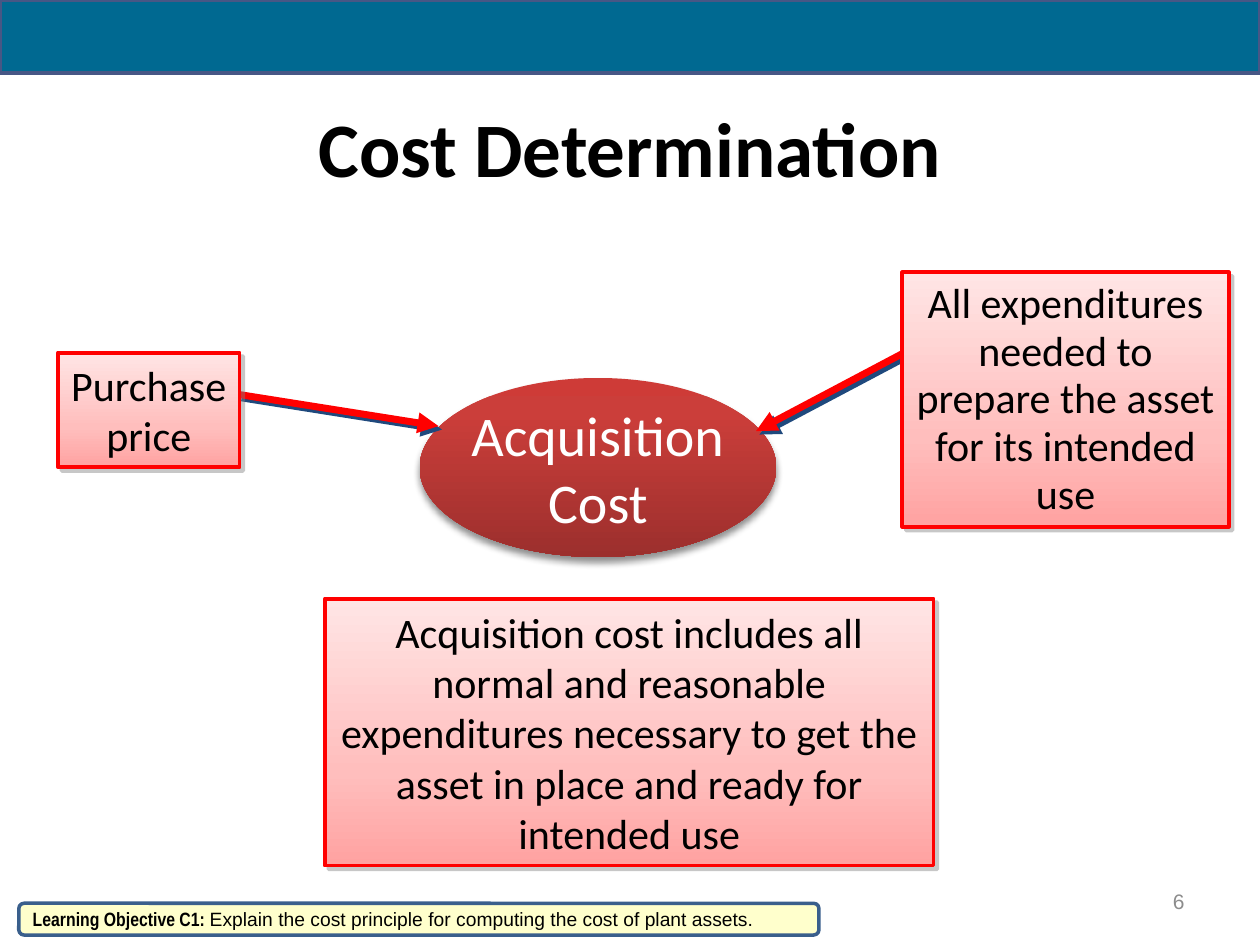
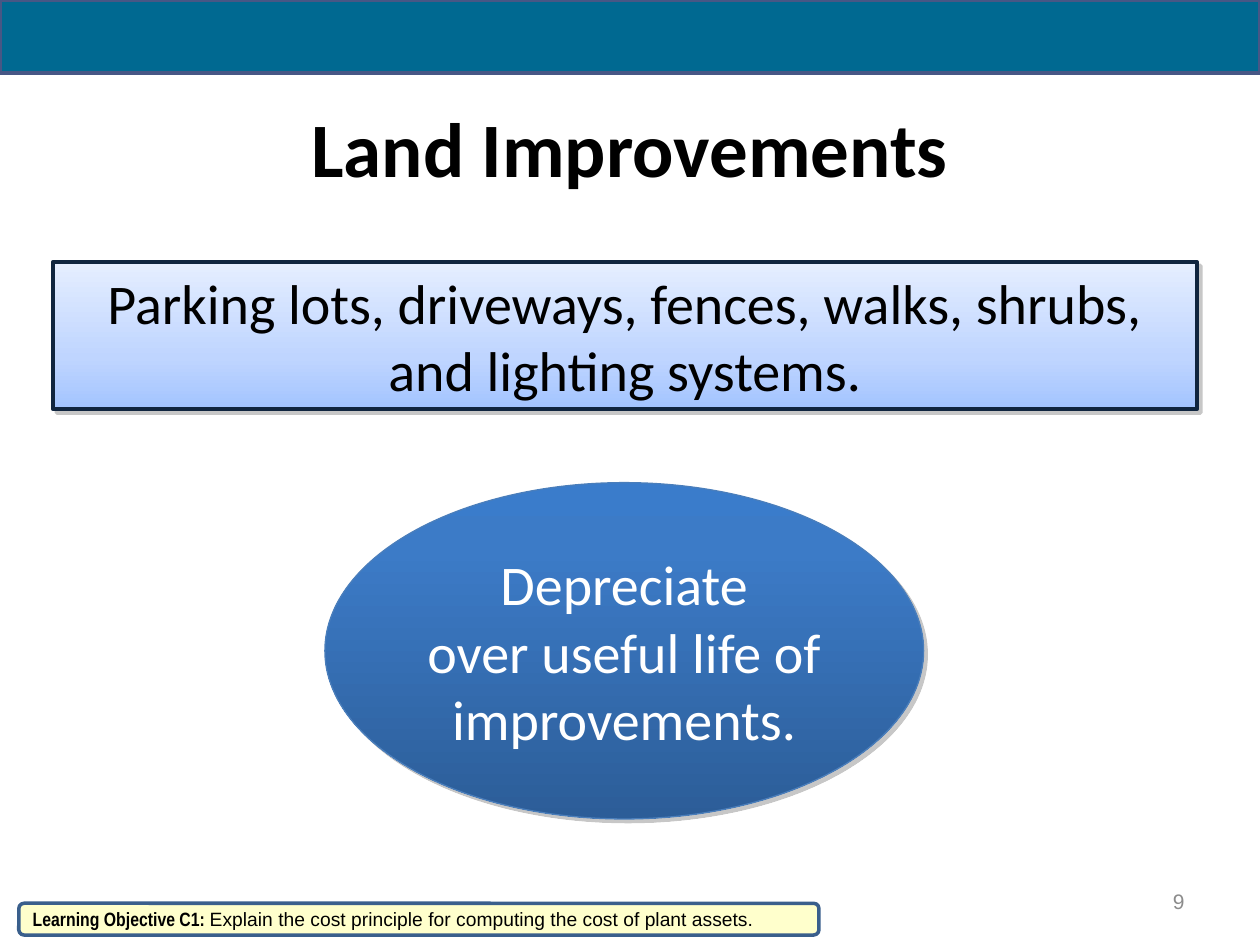
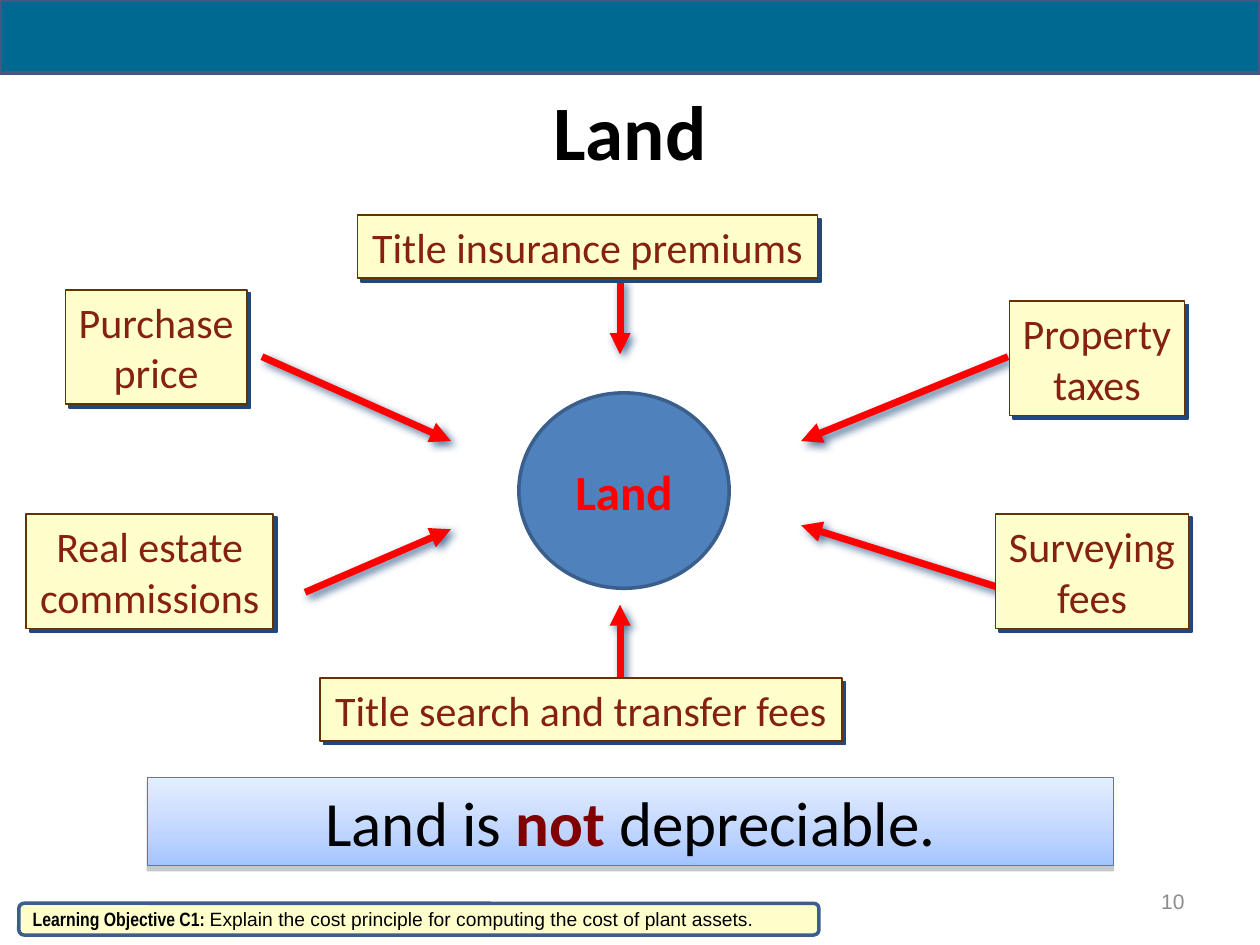
from dataclasses import dataclass, replace

from lxml.etree import SubElement
from pptx import Presentation
from pptx.dml.color import RGBColor
from pptx.enum.shapes import MSO_CONNECTOR, MSO_SHAPE
from pptx.enum.text import MSO_ANCHOR, PP_ALIGN
from pptx.oxml.ns import qn
from pptx.util import Cm, Pt


@dataclass(frozen=True)
class Shadow:
    color: str
    alpha: int
    blur: float
    distance: float
    angle: int = 45


@dataclass(frozen=True)
class Look:
    """Fill is one colour, or (position, colour) stops running downwards."""
    fill: object
    line: str = None
    width: float = 0
    shadow: Shadow = None
    ink: str = "000000"
    size: int = 24
    bold: bool = False
    wrap: bool = True


@dataclass(frozen=True)
class Theme:
    font: str = "Calibri"
    small_font: str = "Arial"
    narrow_font: str = "Arial Narrow"
    black: str = "000000"
    red: str = "FF0000"
    maroon: str = "800000"
    gray: str = "8C8C8C"
    title_size: int = 44
    number_size: int = 12
    arrow_width: float = 4
    soft: Shadow = Shadow("808080", 43, 0, 3)
    hard: Shadow = Shadow("1F497D", 100, 0, 2.8)
    blurred: Shadow = Shadow("1F497D", 75, 5, 3)


THEME = Theme()
BAND = Look("006991", "475785", 2.25)
OBJECTIVE = Look("FFFFCC", "3A5F8C", 2, size=11)
PINK = Look(((0, "FFE5E5"), (65, "FFBEBD"), (100, "FFA2A1")),
            THEME.red, 2.25, THEME.soft)
PALE_BLUE = Look(((0, "E5EEFF"), (65, "BFD5FF"), (100, "A3C4FF")),
                 "10253F", 2.25, THEME.soft, size=32)
STATEMENT = replace(PALE_BLUE, line="4A7EBB", width=0.75, size=36,
                    shadow=replace(THEME.soft, angle=90))
RED_OVAL = Look(((0, "CE3B37"), (20, "CB3E3A"), (100, "9C2F2D")),
                shadow=Shadow("000000", 43, 4, 3, 90),
                ink="FFFFFF", size=32, wrap=False)
BLUE_OVAL = Look(((0, "3A7CCB"), (20, "3C7BC7"), (100, "2C5D98")),
                 "4A7EBB", 0.75, THEME.soft, "FFFFFF", 32)
LAND_OVAL = Look("4F81BD", "3A5F8C", 2, ink=THEME.red, size=28, bold=True)
CREAM = Look("FFFFCC", "663300", 1, THEME.hard, "862110", wrap=False)


@dataclass(frozen=True)
class Box:
    """A region in centimetres."""
    left: float
    top: float
    width: float
    height: float

    def point(self, x, y):
        return Cm(self.left + x), Cm(self.top + y)

    def area(self, x, y, width, height):
        return *self.point(x, y), Cm(width), Cm(height)


PAGE = Box(0, 0, 25.4, 19.05)
BODY = Box(0, 4, 25.4, 14)
TITLE = Box(1.27, 1.47, 22.86, 2.97)
HIGH_TITLE = Box(1.27, 1.27, 22.86, 2.67)


def add_span(para, text, color, size, bold=False, font=THEME.font):
    """Add a run for each line of the text, with line breaks between them."""
    for index, line in enumerate(text.split("\n")):
        if index:
            para.add_line_break()
        span = para.add_run()
        span.text = line
        span.font.name = font
        span.font.size = Pt(size)
        span.font.bold = bold
        span.font.color.rgb = RGBColor.from_string(color)


def add_shadow(shape, shadow):
    properties = shape._element.spPr
    effects = properties.find(qn("a:effectLst"))
    if effects is None:
        effects = SubElement(properties, qn("a:effectLst"))
    outer = SubElement(effects, qn("a:outerShdw"), blurRad=str(Pt(shadow.blur)),
                       dist=str(Pt(shadow.distance)),
                       dir=str(shadow.angle * 60000), algn="ctr", rotWithShape="0")
    color = SubElement(outer, qn("a:srgbClr"), val=shadow.color)
    SubElement(color, qn("a:alpha"), val=str(shadow.alpha * 1000))


def fill_shape(shape, fill):
    if isinstance(fill, str):
        shape.fill.solid()
        shape.fill.fore_color.rgb = RGBColor.from_string(fill)
        return
    shape.fill.gradient()
    shape.fill.gradient_angle = 270
    stops = shape._element.spPr.find(qn("a:gradFill")).find(qn("a:gsLst"))
    for stop in list(stops):
        stops.remove(stop)
    for position, color in fill:
        stop = SubElement(stops, qn("a:gs"), pos=str(position * 1000))
        SubElement(stop, qn("a:srgbClr"), val=color)


def add_block(page, area, look, *paragraphs, kind=MSO_SHAPE.RECTANGLE):
    """Add a shape whose text is centred, and return it."""
    shape = page.shapes.add_shape(kind, *area)
    shape.shadow.inherit = False
    fill_shape(shape, look.fill)
    if look.line:
        shape.line.color.rgb = RGBColor.from_string(look.line)
        shape.line.width = Pt(look.width)
    else:
        shape.line.fill.background()
    if look.shadow:
        add_shadow(shape, look.shadow)
    frame = shape.text_frame
    frame.word_wrap = look.wrap
    frame.vertical_anchor = MSO_ANCHOR.MIDDLE
    for index, text in enumerate(paragraphs):
        para = frame.add_paragraph() if index else frame.paragraphs[0]
        para.alignment = PP_ALIGN.CENTER
        add_span(para, text, look.ink, look.size, look.bold)
    return shape


def add_arrow(page, start, end, shadow):
    arrow = page.shapes.add_connector(MSO_CONNECTOR.STRAIGHT, *start, *end)
    arrow.line.color.rgb = RGBColor.from_string(THEME.red)
    arrow.line.width = Pt(THEME.arrow_width)
    SubElement(arrow._element.spPr.find(qn("a:ln")), qn("a:tailEnd"), type="triangle")
    add_shadow(arrow, shadow)


def add_title(page, box, text):
    title = page.shapes.title
    title.left, title.top, title.width, title.height = box.area(
        0, 0, box.width, box.height)
    frame = title.text_frame
    frame.vertical_anchor = MSO_ANCHOR.MIDDLE
    para = frame.paragraphs[0]
    para.alignment = PP_ALIGN.CENTER
    add_span(para, text, THEME.black, THEME.title_size, True)


def add_surround(page, box, number):
    """Add the top band, the page number and the learning objective."""
    add_block(page, box.area(0, 0, box.width, 1.47), BAND)

    label = page.shapes.add_textbox(*box.area(18.21, 17.65, 5.92, 1.02))
    label.text_frame.word_wrap = True
    label.text_frame.vertical_anchor = MSO_ANCHOR.MIDDLE
    para = label.text_frame.paragraphs[0]
    para.alignment = PP_ALIGN.RIGHT
    add_span(para, str(number), THEME.gray, THEME.number_size, font=THEME.small_font)

    objective = add_block(page, box.area(0.38, 18.21, 16.13, 0.64), OBJECTIVE,
                          kind=MSO_SHAPE.ROUNDED_RECTANGLE)
    para = objective.text_frame.paragraphs[0]
    para.alignment = PP_ALIGN.LEFT
    add_span(para, "Learning Objective C1: ", OBJECTIVE.ink, OBJECTIVE.size,
             True, THEME.narrow_font)
    add_span(para, "Explain the cost principle for computing the cost of plant assets.",
             OBJECTIVE.ink, OBJECTIVE.size, font=THEME.small_font)


def draw_cost(page, box):
    add_block(page, box.area(8.46, 3.62, 7.19, 3.61), RED_OVAL,
              "Acquisition\nCost", kind=MSO_SHAPE.OVAL)
    add_block(page, box.area(6.55, 8.07, 12.27, 5.38), PINK,
              "Acquisition cost includes all normal and reasonable expenditures "
              "necessary to get the asset in place and ready for intended use")
    add_arrow(page, box.point(18.85, 2.78), box.point(15.24, 4.69), THEME.hard)
    expenditures = add_block(
        page, box.area(18.19, 1.49, 6.58, 5.13), PINK,
        "All expenditures needed to prepare the asset for its intended use")
    expenditures.text_frame.paragraphs[0].line_spacing = 0.95
    add_arrow(page, box.point(4.8, 3.95), box.point(8.84, 4.59), THEME.hard)
    add_block(page, box.area(1.17, 3.11, 3.66, 2.31), replace(PINK, wrap=False),
              "Purchase\nprice")


def draw_improvements(page, box):
    add_block(page, box.area(1.07, 1.28, 23.06, 2.97), PALE_BLUE,
              "Parking lots, driveways, fences, walks, shrubs, and lighting systems.")
    add_block(page, box.area(6.55, 5.73, 12.07, 6.78), BLUE_OVAL,
              "Depreciate\nover useful life of improvements.", kind=MSO_SHAPE.OVAL)


def draw_land(page, box):
    statement = add_block(page, box.area(2.97, 11.67, 19.48, 1.78), STATEMENT)
    para = statement.text_frame.paragraphs[0]
    para.alignment = PP_ALIGN.CENTER
    add_span(para, "Land is ", STATEMENT.ink, STATEMENT.size)
    add_span(para, "not", THEME.maroon, STATEMENT.size, True)
    add_span(para, " depreciable.", STATEMENT.ink, STATEMENT.size)

    arrows = [
        ((12.5, 1.64), (12.5, 3.14)),
        ((12.5, 10.1), (12.5, 8.19)),
        ((6.15, 7.94), (9.09, 6.67)),
        ((20.32, 3.19), (16.15, 4.89)),
        ((5.28, 3.19), (9.09, 4.89)),
        ((20.19, 7.86), (16.15, 6.59)),
    ]
    for start, end in arrows:
        add_arrow(page, box.point(*start), box.point(*end), THEME.blurred)

    one_line, two_lines = 1.27, 2.31
    costs = [
        (1.32, 1.84, 3.66, two_lines, ["Purchase\nprice"]),
        (0.53, 6.36, 4.98, two_lines, ["Real estate", "commissions"]),
        (7.21, 0.34, 9.27, one_line, ["Title insurance premiums"]),
        (20.35, 2.07, 3.53, two_lines, ["Property", "taxes"]),
        (20.07, 6.36, 3.89, two_lines, ["Surveying\nfees"]),
        (6.45, 9.67, 10.52, one_line, ["Title search and transfer fees"]),
    ]
    for x, y, width, height, lines in costs:
        add_block(page, box.area(x, y, width, height), CREAM, *lines)
    add_block(page, box.area(10.46, 3.92, 4.24, 3.94), LAND_OVAL, "Land",
              kind=MSO_SHAPE.OVAL)


def main():
    deck = Presentation()
    deck.slide_width, deck.slide_height = Cm(PAGE.width), Cm(PAGE.height)
    title_only = deck.slide_layouts[5]
    pages = [
        ("Cost Determination", TITLE, 6, draw_cost),
        ("Land Improvements", TITLE, 9, draw_improvements),
        ("Land", HIGH_TITLE, 10, draw_land),
    ]
    for title, title_box, number, draw in pages:
        page = deck.slides.add_slide(title_only)
        add_title(page, title_box, title)
        draw(page, BODY)
        add_surround(page, PAGE, number)
    deck.save("out.pptx")


if __name__ == "__main__":
    main()
